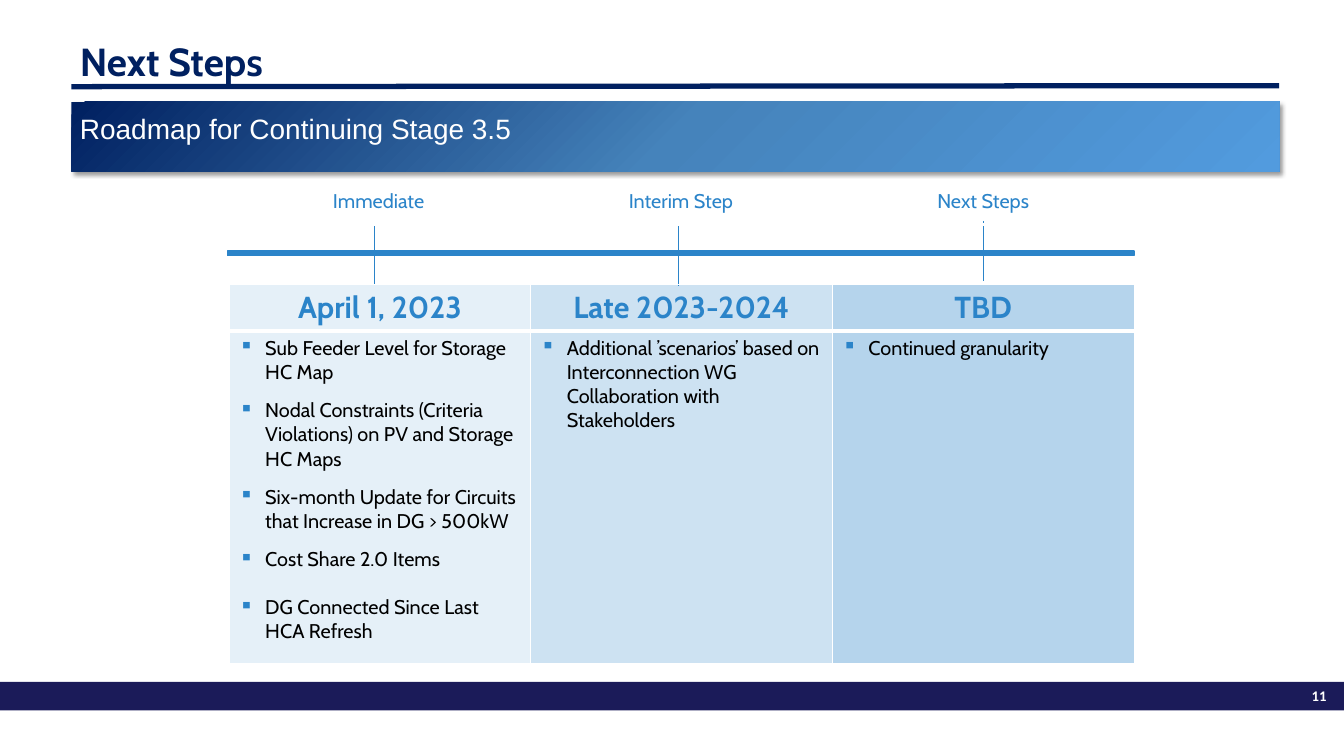
"""Build the Next Steps roadmap slide."""
from pptx import Presentation
from pptx.dml.color import RGBColor
from pptx.enum.shapes import MSO_CONNECTOR, MSO_SHAPE
from pptx.enum.text import MSO_ANCHOR, MSO_AUTO_SIZE, PP_ALIGN
from pptx.oxml import parse_xml
from pptx.oxml.ns import nsdecls
from pptx.util import Cm, Pt

NAVY, BLUE, WHITE = "002060", "2B84C9", "FFFFFF"
rgb = RGBColor.from_string


def style(p, size, color, font="Cabin", bold=False, align=PP_ALIGN.LEFT):
    p.alignment = align
    for r in p.runs:
        r.font.size, r.font.name, r.font.bold = Pt(size), font, bold
        r.font.color.rgb = rgb(color)


def element(tag, attrs="", inner=""):
    return parse_xml(f"<a:{tag} {nsdecls('a')} {attrs}>{inner}</a:{tag}>")


prs = Presentation()
prs.slide_width, prs.slide_height = Cm(40.64), Cm(22.86)
s = prs.slides.add_slide(prs.slide_layouts[1])
title, banner = s.placeholders

for sp, top, height, text in [(title, 1.22, 1.45, "Next Steps"),
                              (banner, 3.07, 2.11, "Roadmap for Continuing Stage 3.5")]:
    sp.left, sp.top, sp.width, sp.height = Cm(2.16), Cm(top), Cm(36.53), Cm(height)
    sp.text_frame.text = text
    sp.text_frame.auto_size = MSO_AUTO_SIZE.NONE

title.text_frame.vertical_anchor = MSO_ANCHOR.MIDDLE
p = title.text_frame.paragraphs[0]
p.line_spacing = 0.9
style(p, 33.5, NAVY, bold=True)

banner.text_frame.margin_top = Cm(0.2)
p = banner.text_frame.paragraphs[0]
pPr = p._p.get_or_add_pPr()
pPr.set("marL", "0")
pPr.set("indent", "0")
pPr.append(element("buNone"))
p.line_spacing, p.space_before = 1.1, Pt(0)
style(p, 24, WHITE, "Arial")
stops = "".join(f'<a:gs pos="{pos}"><a:srgbClr val="{c}"/></a:gs>'
                for pos, c in [(0, NAVY), (50000, "4583BB"), (100000, "529BDE")])
spPr = banner._element.spPr
spPr.append(element("gradFill", 'rotWithShape="1"',
                    f'<a:gsLst>{stops}</a:gsLst><a:lin ang="2700000" scaled="0"/>'))
spPr.append(element("effectLst", "", '<a:outerShdw blurRad="50800" dist="38100" dir="2700000" algn="tl">'
                    '<a:srgbClr val="000000"><a:alpha val="40000"/></a:srgbClr></a:outerShdw>'))

for left, top, width, height, color in [(0, 20.62, 40.64, 0.86, "1B1B59"),
                                        (6.88, 7.59, 27.41, 0.15, BLUE)]:
    sp = s.shapes.add_shape(MSO_SHAPE.RECTANGLE, Cm(left), Cm(top), Cm(width), Cm(height))
    sp.shadow.inherit = False
    sp.fill.solid()
    sp.fill.fore_color.rgb = sp.line.color.rgb = rgb(color)
    sp.line.width = Pt(1)
    if left == 0:
        sp.line.fill.background()

tf = s.shapes.add_textbox(Cm(38.68), Cm(20.65), Cm(1.68), Cm(0.79)).text_frame
tf.word_wrap = True
tf.vertical_anchor = MSO_ANCHOR.MIDDLE
tf.text = "11"
style(tf.paragraphs[0], 12.6, WHITE, "Calibri", True, PP_ALIGN.RIGHT)

ticks = [(x, top, x, top + 1.83, BLUE, 0.5)
         for x, top in [(11.33, 6.76), (20.5, 6.81), (29.72, 6.68)]]
for x1, y1, x2, y2, color, width in [(2.16, 2.62, 38.68, 2.59, NAVY, 4.5)] + ticks:
    line = s.shapes.add_connector(MSO_CONNECTOR.STRAIGHT, Cm(x1), Cm(y1), Cm(x2), Cm(y2))
    line.line.color.rgb, line.line.width = rgb(color), Pt(width)
    line._element.spPr.append(element("effectLst"))

steps = [
    ("Immediate", "April 1, 2023", 12000,
     ["Sub Feeder Level for Storage HC Map",
      "Nodal Constraints (Criteria Violations) on PV and Storage HC Maps",
      "Six-month Update for Circuits that Increase in DG > 500kW",
      "Cost Share 2.0 Items",
      "DG Connected Since Last HCA Refresh"]),
    ("Interim Step", "Late 2023-2024", 23000,
     ["Additional ’scenarios’ based on Interconnection WG Collaboration with Stakeholders"]),
    ("Next Steps", "TBD", 35000, ["Continued granularity"]),
]
gaps = [0, 12, 12, 12, 20.4]

roadmap = s.shapes.add_table(2, 3, Cm(6.93), Cm(8.59), Cm(27.36), Cm(11.48)).table
roadmap.rows[0].height, roadmap.rows[1].height = Cm(1.42), Cm(10.06)
labels = s.shapes.add_table(1, 3, Cm(6.88), Cm(5.56), Cm(27.42), Cm(1.24)).table

for col, (label, date, alpha, items) in enumerate(steps):
    label_cell, date_cell, list_cell = labels.cell(0, col), roadmap.cell(0, col), roadmap.cell(1, col)
    label_cell.text, date_cell.text, list_cell.text = label, date, "\n".join(items)
    style(label_cell.text_frame.paragraphs[0], 17, BLUE, align=PP_ALIGN.CENTER)
    style(date_cell.text_frame.paragraphs[0], 26, BLUE, bold=True, align=PP_ALIGN.CENTER)
    for p, gap in zip(list_cell.text_frame.paragraphs, gaps):
        pPr = p._p.get_or_add_pPr()
        pPr.set("marL", str(Cm(0.79)))
        pPr.set("indent", str(-Cm(0.79)))
        pPr.append(element("buClr", "", f'<a:srgbClr val="{BLUE}"/>'))
        pPr.append(element("buChar", 'char="▪"'))
        p.space_before = Pt(gap)
        style(p, 17, "000000")
    label_cell.fill.background()
    for cell in (date_cell, list_cell):
        cell.fill.solid()
        cell.fill.fore_color.rgb = rgb(BLUE)
        tint = cell._tc.tcPr.find(".//" + "{http://schemas.openxmlformats.org/drawingml/2006/main}srgbClr")
        tint.append(element("alpha", f'val="{alpha}"'))
    for cell in (label_cell, date_cell, list_cell):
        cell.margin_left = cell.margin_right = Cm(0.3)
        cell.margin_top = cell.margin_bottom = Cm(0.15)
        for i, side in enumerate("LRTB"):
            width = Pt(3) if side == "B" and cell is not list_cell else Pt(1)
            cell._tc.tcPr.insert(i, element(f"ln{side}", f'w="{width}"',
                                            f'<a:solidFill><a:srgbClr val="{WHITE}"/></a:solidFill>'))

for table in (roadmap, labels):
    table.first_row = table.horz_banding = False

prs.save("out.pptx")
